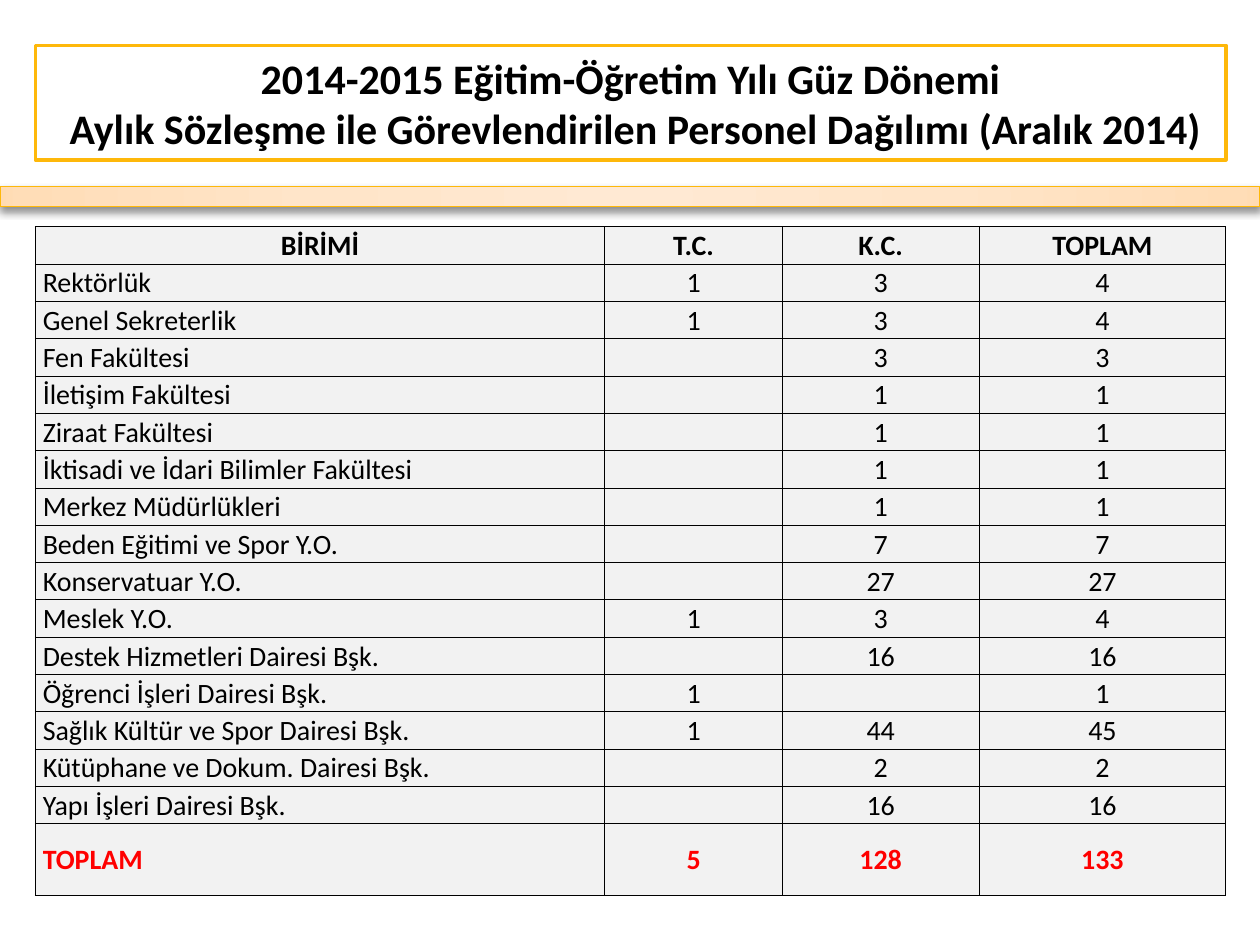
from lxml import etree
from pptx import Presentation
from pptx.dml.color import RGBColor
from pptx.enum.shapes import MSO_SHAPE
from pptx.enum.text import MSO_ANCHOR, PP_ALIGN
from pptx.oxml import parse_xml
from pptx.oxml.ns import nsdecls, qn
from pptx.util import Inches, Pt

RECTANGLE = MSO_SHAPE.RECTANGLE
MIDDLE = MSO_ANCHOR.MIDDLE
LEFT, CENTER = PP_ALIGN.LEFT, PP_ALIGN.CENTER

COLORS = {
    "text": "000000",
    "total": "FF0000",
    "white": "FFFFFF",
    "cell": "F2F2F2",
    "gold": "FEB80A",
}
BAND_STOPS = [(0, "FFE9D3"), (50, "FFE5C9"), (97, "FFDDB7"), (100, "FFDBB2")]
FONT = "Calibri"
TITLE = (
    "2014-2015 Eğitim-Öğretim Yılı Güz Dönemi\v"
    " Aylık Sözleşme ile Görevlendirilen Personel Dağılımı (Aralık 2014)"
)
COLUMN_WIDTHS = [4.52, 1.41, 1.56, 1.96]
TABLE_HEIGHT = 5.31
TOTAL_ROW_HEIGHT = 0.57
STAFF = [
    ("BİRİMİ", "T.C.", "K.C.", "TOPLAM"),
    ("Rektörlük", "1", "3", "4"),
    ("Genel Sekreterlik", "1", "3", "4"),
    ("Fen Fakültesi", "", "3", "3"),
    ("İletişim Fakültesi", "", "1", "1"),
    ("Ziraat Fakültesi", "", "1", "1"),
    ("İktisadi ve İdari Bilimler Fakültesi", "", "1", "1"),
    ("Merkez Müdürlükleri", "", "1", "1"),
    ("Beden Eğitimi ve Spor Y.O.", "", "7", "7"),
    ("Konservatuar Y.O.", "", "27", "27"),
    ("Meslek Y.O.", "1", "3", "4"),
    ("Destek Hizmetleri Dairesi Bşk.", "", "16", "16"),
    ("Öğrenci İşleri Dairesi Bşk.", "1", "", "1"),
    ("Sağlık Kültür ve Spor Dairesi Bşk.", "1", "44", "45"),
    ("Kütüphane ve Dokum. Dairesi Bşk.", "", "2", "2"),
    ("Yapı İşleri Dairesi Bşk.", "", "16", "16"),
    ("TOPLAM", "5", "128", "133"),
]


def color(name):
    return RGBColor.from_string(COLORS[name])


def write_text(frame, text, size=16, bold=False, ink="text", align=CENTER):
    paragraph = frame.paragraphs[0]
    paragraph.alignment = align
    if not text:
        etree.SubElement(paragraph._p, qn("a:endParaRPr"), sz=str(size * 100))
        return
    paragraph.text = text
    for span in paragraph.runs:
        span.font.name = FONT
        span.font.size = Pt(size)
        span.font.bold = bold
        span.font.color.rgb = color(ink)


def add_box(page, left, top, width, height, line_width):
    box = page.shapes.add_shape(
        RECTANGLE, Inches(left), Inches(top), Inches(width), Inches(height)
    )
    box.shadow.inherit = False
    box.line.color.rgb = color("gold")
    box.line.width = Pt(line_width)
    return box


def add_title(page):
    box = add_box(page, 0.28, 0.36, 9.45, 0.91, 2)
    box.fill.solid()
    box.fill.fore_color.rgb = color("white")
    frame = box.text_frame
    frame.word_wrap = True
    frame.vertical_anchor = MIDDLE
    write_text(frame, TITLE, size=24, bold=True)


def add_band(page):
    band = add_box(page, 0, 1.48, 10, 0.16, 0.75)
    properties = band._element.spPr
    stops = "".join(
        f'<a:gs pos="{place * 1000}"><a:srgbClr val="{shade}"/></a:gs>'
        for place, shade in BAND_STOPS
    )
    properties.find(qn("a:prstGeom")).addnext(parse_xml(
        f'<a:gradFill {nsdecls("a")} rotWithShape="1"><a:gsLst>{stops}</a:gsLst>'
        '<a:path path="circle">'
        '<a:fillToRect l="50000" t="50000" r="50000" b="50000"/>'
        '</a:path></a:gradFill>'
    ))
    properties.find(qn("a:effectLst")).append(parse_xml(
        f'<a:outerShdw {nsdecls("a")} blurRad="{Pt(5)}" dist="{Pt(2)}"'
        ' dir="5400000" rotWithShape="0"><a:srgbClr val="000000">'
        '<a:alpha val="43000"/></a:srgbClr></a:outerShdw>'
    ))


def style_cell(cell, is_name):
    cell.vertical_anchor = MIDDLE
    cell.margin_left = Inches(0.06 if is_name else 0.01)
    cell.margin_right = cell.margin_top = Inches(0.01)
    cell.margin_bottom = 0
    properties = cell._tc.get_or_add_tcPr()
    for side in ("lnL", "lnR", "lnT", "lnB"):
        properties.append(parse_xml(
            f'<a:{side} {nsdecls("a")} w="{Pt(0.5)}"><a:solidFill>'
            f'<a:srgbClr val="{COLORS["text"]}"/></a:solidFill></a:{side}>'
        ))
    cell.fill.solid()
    cell.fill.fore_color.rgb = color("cell")


def add_staff_table(page):
    table = page.shapes.add_table(
        len(STAFF), len(COLUMN_WIDTHS), Inches(0.28), Inches(1.8),
        Inches(sum(COLUMN_WIDTHS)), Inches(TABLE_HEIGHT),
    ).table
    for column, width in zip(table.columns, COLUMN_WIDTHS):
        column.width = Inches(width)
    last = len(STAFF) - 1
    row_height = (TABLE_HEIGHT - TOTAL_ROW_HEIGHT) / last
    for row_index, values in enumerate(STAFF):
        is_header, is_total = row_index == 0, row_index == last
        height = TOTAL_ROW_HEIGHT if is_total else row_height
        table.rows[row_index].height = Inches(height)
        for column_index, text in enumerate(values):
            cell = table.cell(row_index, column_index)
            is_name = column_index == 0 and not is_header
            style_cell(cell, is_name)
            write_text(
                cell.text_frame, text,
                bold=is_header or is_total,
                ink="total" if is_total else "text",
                align=LEFT if is_name else CENTER,
            )


def main():
    deck = Presentation()
    deck.slide_width, deck.slide_height = Inches(10), Inches(7.5)
    page = deck.slides.add_slide(deck.slide_layouts[6])
    add_title(page)
    add_band(page)
    add_staff_table(page)
    deck.save("out.pptx")


if __name__ == "__main__":
    main()
